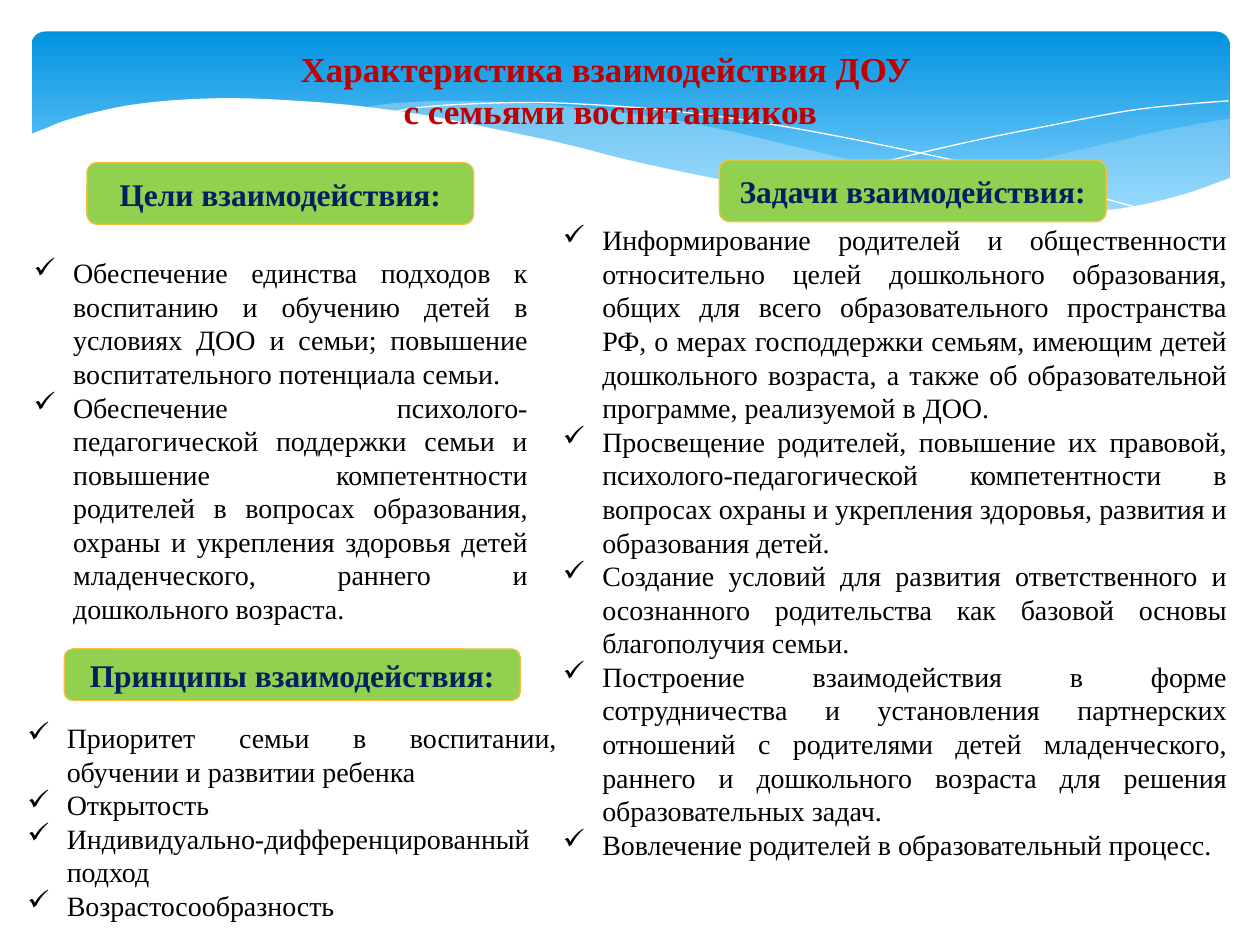
from dataclasses import dataclass

from lxml.etree import SubElement
from pptx import Presentation
from pptx.dml.color import RGBColor
from pptx.enum.shapes import MSO_SHAPE
from pptx.enum.text import MSO_ANCHOR, PP_ALIGN
from pptx.oxml.ns import qn
from pptx.util import Pt


@dataclass(frozen=True)
class Theme:
    font: str = "Times New Roman"
    title_size: int = 20
    heading_size: int = 18
    body_size: int = 16
    title: str = "C00000"
    heading: str = "002060"
    body: str = "000000"
    label_fill: str = "92D050"
    label_line: str = "F5C040"
    banner_top: str = "0293E0"
    banner_bottom: str = "83D3FE"
    wave: str = "C6E7FC"
    white: str = "FFFFFF"


def color(value):
    return RGBColor.from_string(value)


def write_text(frame, lines, *, font, size, ink, bold=False,
               align=PP_ALIGN.CENTER, anchor=MSO_ANCHOR.TOP, bullet=None, indent=22.5):
    """Fill a text frame with one paragraph per line."""
    frame.word_wrap = True
    frame.vertical_anchor = anchor
    for index, line in enumerate(lines):
        paragraph = frame.add_paragraph() if index else frame.paragraphs[0]
        paragraph.alignment = align
        run = paragraph.add_run()
        run.text = line
        run.font.name, run.font.size, run.font.bold = font, Pt(size), bold
        run.font.color.rgb = color(ink)
        if bullet:
            properties = paragraph._p.get_or_add_pPr()
            properties.set("marL", str(Pt(indent)))
            properties.set("indent", str(-Pt(indent)))
            SubElement(properties, qn("a:buChar")).set("char", bullet)


def smooth_curve(knots, steps=5):
    """Catmull-Rom points that run through all the knots."""
    padded = [knots[0], *knots, knots[-1]]
    points = [knots[0]]
    for a, b, c, d in zip(padded, padded[1:], padded[2:], padded[3:]):
        for step in range(1, steps + 1):
            t = step / steps
            points.append(tuple(
                0.5 * (2 * q + (r - p) * t + (2 * p - 5 * q + 4 * r - s) * t ** 2
                       + (3 * q - p - 3 * r + s) * t ** 3)
                for p, q, r, s in zip(a, b, c, d)))
    return points


class SlideBuilder:
    def __init__(self, slide, theme):
        self.shapes = slide.shapes
        self.theme = theme

    def rounded(self, left, top, width, height):
        shape = self.shapes.add_shape(MSO_SHAPE.ROUNDED_RECTANGLE,
                                      Pt(left), Pt(top), Pt(width), Pt(height))
        shape.shadow.inherit = False
        return shape

    def banner(self, left, top, width, height):
        shape = self.rounded(left, top, width, height)
        shape.adjustments[0] = 0.07
        shape.line.fill.background()
        shape.fill.gradient()
        shape.fill.gradient_angle = 270
        first, last = shape.fill.gradient_stops
        first.color.rgb = color(self.theme.banner_top)
        last.color.rgb = color(self.theme.banner_bottom)
        last.position = 0.9

    def outline(self, points, closed):
        (start_x, start_y), *rest = [(Pt(x), Pt(y)) for x, y in points]
        builder = self.shapes.build_freeform(start_x, start_y)
        builder.add_line_segments(rest, close=closed)
        shape = builder.convert_to_shape()
        shape.shadow.inherit = False
        return shape

    def wave(self, *edges, fill, opacity=100):
        points = [point for edge in edges for point in smooth_curve(edge)]
        shape = self.outline(points, True)
        shape.line.fill.background()
        shape.fill.solid()
        shape.fill.fore_color.rgb = color(fill)
        if opacity < 100:
            tint = shape._element.spPr.find(qn("a:solidFill"))[0]
            SubElement(tint, qn("a:alpha")).set("val", str(opacity * 1000))

    def thread(self, knots):
        shape = self.outline(smooth_curve(knots), False)
        shape.fill.background()
        shape.line.color.rgb = color(self.theme.white)
        shape.line.width = Pt(0)

    def label(self, left, top, width, height, text):
        theme = self.theme
        shape = self.rounded(left, top, width, height)
        shape.fill.solid()
        shape.fill.fore_color.rgb = color(theme.label_fill)
        shape.line.color.rgb = color(theme.label_line)
        shape.line.width = Pt(0.75)
        write_text(shape.text_frame, [text], font=theme.font, size=theme.heading_size,
                   ink=theme.heading, bold=True, anchor=MSO_ANCHOR.MIDDLE)

    def text(self, left, top, width, height, lines, **style):
        box = self.shapes.add_textbox(Pt(left), Pt(top), Pt(width), Pt(height))
        write_text(box.text_frame, lines, font=self.theme.font, **style)

    def title(self, left, top, width, height, lines):
        self.text(left, top, width, height, lines, size=self.theme.title_size,
                  ink=self.theme.title, bold=True)

    def checklist(self, left, top, width, height, lines):
        self.text(left, top, width, height, lines, size=self.theme.body_size,
                  ink=self.theme.body, align=PP_ALIGN.JUSTIFY, bullet="✓")


def main():
    presentation = Presentation()
    presentation.slide_width, presentation.slide_height = Pt(720), Pt(540)
    theme = Theme()
    page = SlideBuilder(presentation.slides.add_slide(presentation.slide_layouts[6]), theme)

    # Banner with its waves
    page.banner(18, 18, 684.7, 112.3)
    page.wave(
        [(702.7, 67.7), (663, 74.9), (620, 85), (542, 103), (476, 115.2)],
        [(476, 115.2), (508, 118.8), (545, 122.4), (578, 123.8), (615, 122.4),
         (652, 117.4), (678, 110.9), (702.7, 101.5)],
        fill=theme.wave, opacity=29)
    page.wave(
        [(643, 120.2), (603, 114.5), (558, 107.3), (508, 96.5), (453, 83.5), (410, 73.4),
         (370, 66.2), (335, 61.9), (302, 59), (260, 57.6), (225, 59), (206, 61.9)],
        [(206, 61.9), (246, 67.7), (291, 76.3), (323, 83.5), (382, 97.2), (433, 108),
         (479, 115.9), (520, 121), (557, 123.8), (589, 124.6), (617, 123.1), (643, 120.2)],
        fill=theme.wave, opacity=40)
    page.thread([(222.5, 64.8), (236, 61.9), (261, 59.8), (300, 58.6), (338, 59.8),
                 (384, 63.4), (438, 70.6), (500, 82.1), (572, 97.9), (653, 119.5)])
    page.thread([(441.4, 108.7), (470, 101.5), (518, 89.3), (559, 79.9),
                 (602, 71.3), (644, 63.4), (675, 59.8), (702, 57.6)])
    page.wave(
        [(703.4, 101.5), (677, 110.9), (647, 118.1), (612, 122.4), (582, 123.1),
         (548, 122.4), (510, 118.8), (467, 112.3), (417, 103.7), (362, 92.2), (322, 82.1),
         (281, 73.4), (245, 66.2), (210, 61.2), (180, 58.3), (139, 56.2), (105, 56.9),
         (76, 59.8), (55, 64), (37, 69), (26, 73.4), (16.6, 77)],
        [(16.6, 161.3), (703.4, 161.3)],
        fill=theme.white)

    # Title
    page.title(65.5, 23.8, 566.6, 55.4,
               ["Характеристика взаимодействия ДОУ ", "с семьями воспитанников"])

    # Section headings
    page.label(49.7, 92.9, 221, 35.3, "Цели взаимодействия:")
    page.label(411.1, 91.4, 221, 35.3, "Задачи взаимодействия:")
    page.label(36.7, 370.8, 260.6, 29.5, "Принципы взаимодействия:")

    # Principles
    page.checklist(8.6, 408.2, 316.8, 123.8, [
        "Приоритет семьи в воспитании, обучении и развитии ребенка",
        "Открытость",
        "Индивидуально-дифференцированный подход",
        "Возрастосообразность",
    ])

    # Goals
    page.checklist(12.2, 142.6, 296.6, 220.3, [
        "Обеспечение единства подходов к воспитанию и обучению детей в условиях ДОО и семьи; "
        "повышение воспитательного потенциала семьи.",
        "Обеспечение психолого-педагогической поддержки семьи и повышение компетентности "
        "родителей в вопросах образования, охраны и укрепления здоровья детей младенческого, "
        "раннего и дошкольного возраста.",
    ])

    # Tasks
    page.checklist(314.6, 123.8, 393.8, 375.8, [
        "Информирование родителей и общественности относительно целей дошкольного "
        "образования, общих для всего образовательного пространства РФ, о мерах господдержки "
        "семьям, имеющим детей дошкольного возраста, а также об образовательной программе, "
        "реализуемой в ДОО.",
        "Просвещение родителей, повышение их правовой, психолого-педагогической "
        "компетентности в вопросах охраны и укрепления здоровья, развития и образования детей.",
        "Создание условий для развития ответственного и осознанного родительства как базовой "
        "основы благополучия семьи.",
        "Построение взаимодействия в форме сотрудничества и установления партнерских "
        "отношений с родителями детей младенческого, раннего и дошкольного возраста для "
        "решения образовательных задач.",
        "Вовлечение родителей в образовательный процесс.",
    ])

    presentation.save("out.pptx")


if __name__ == "__main__":
    main()
